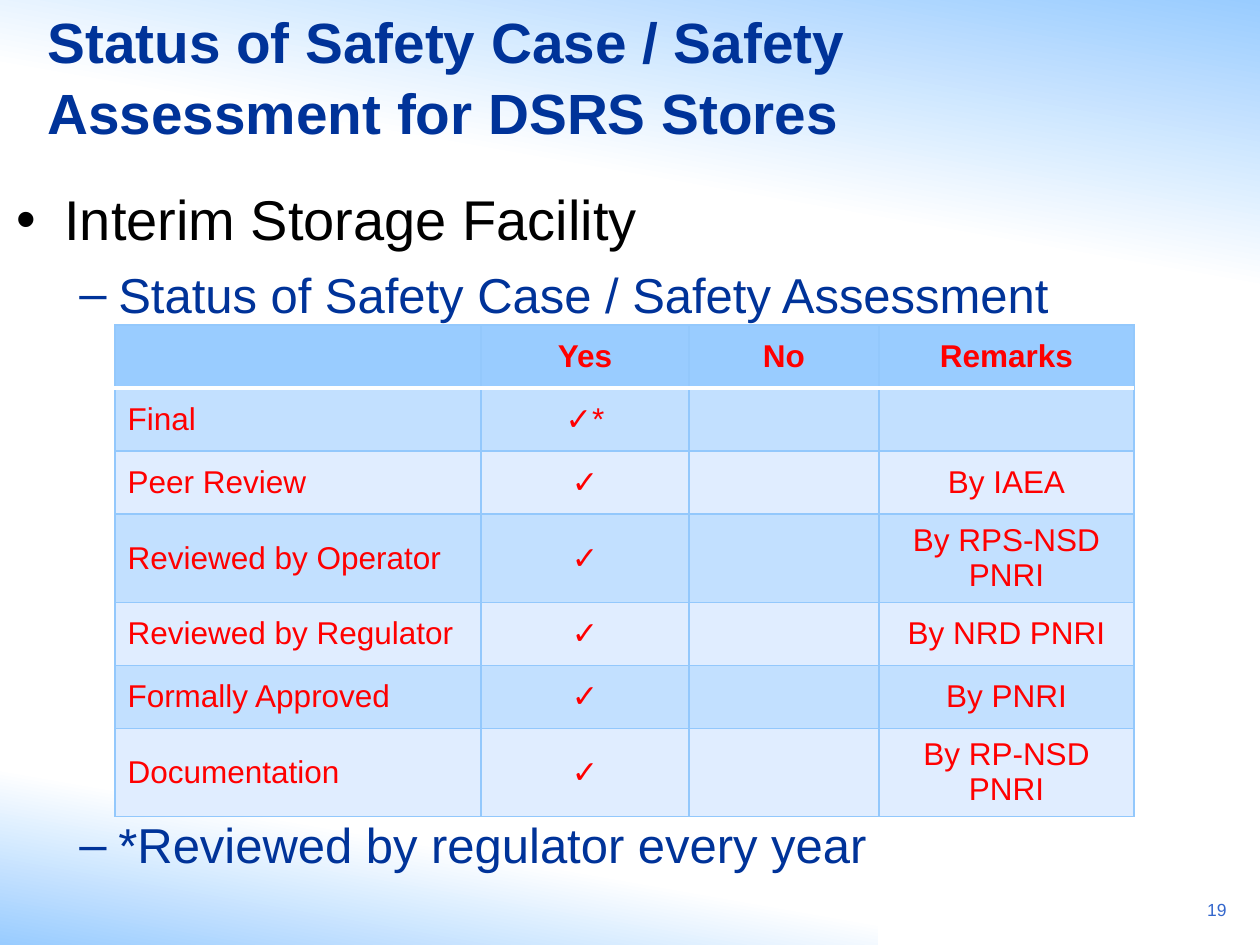
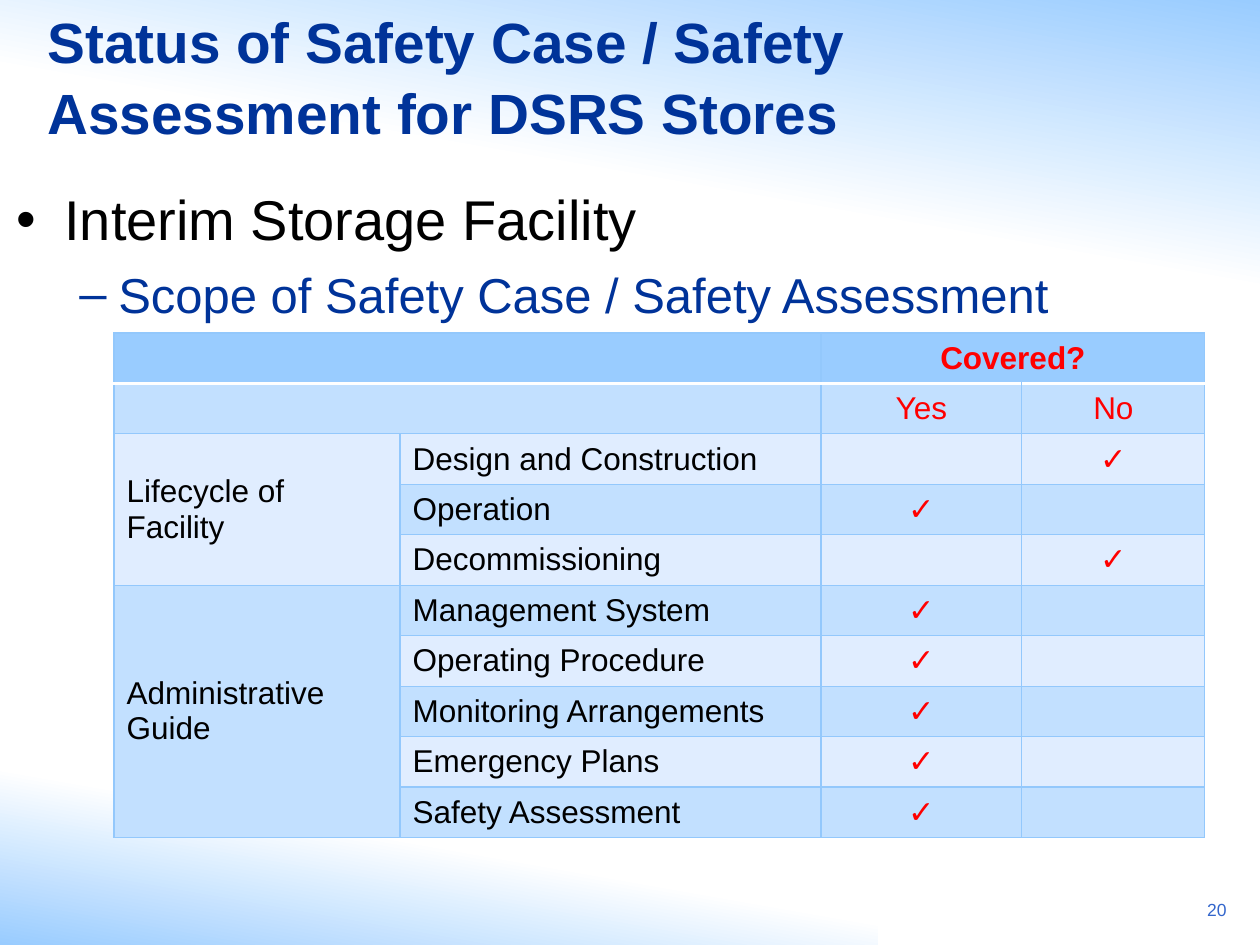
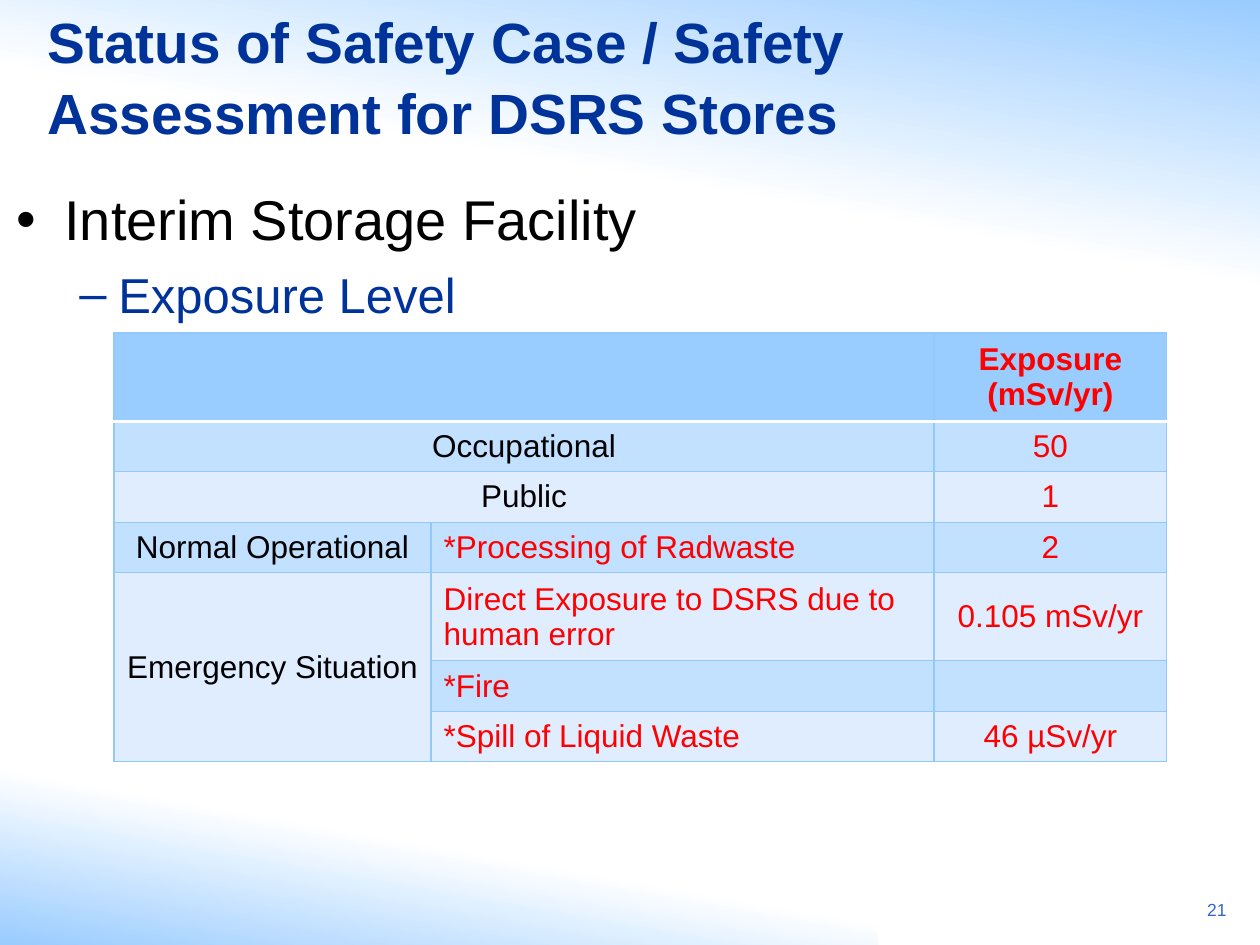
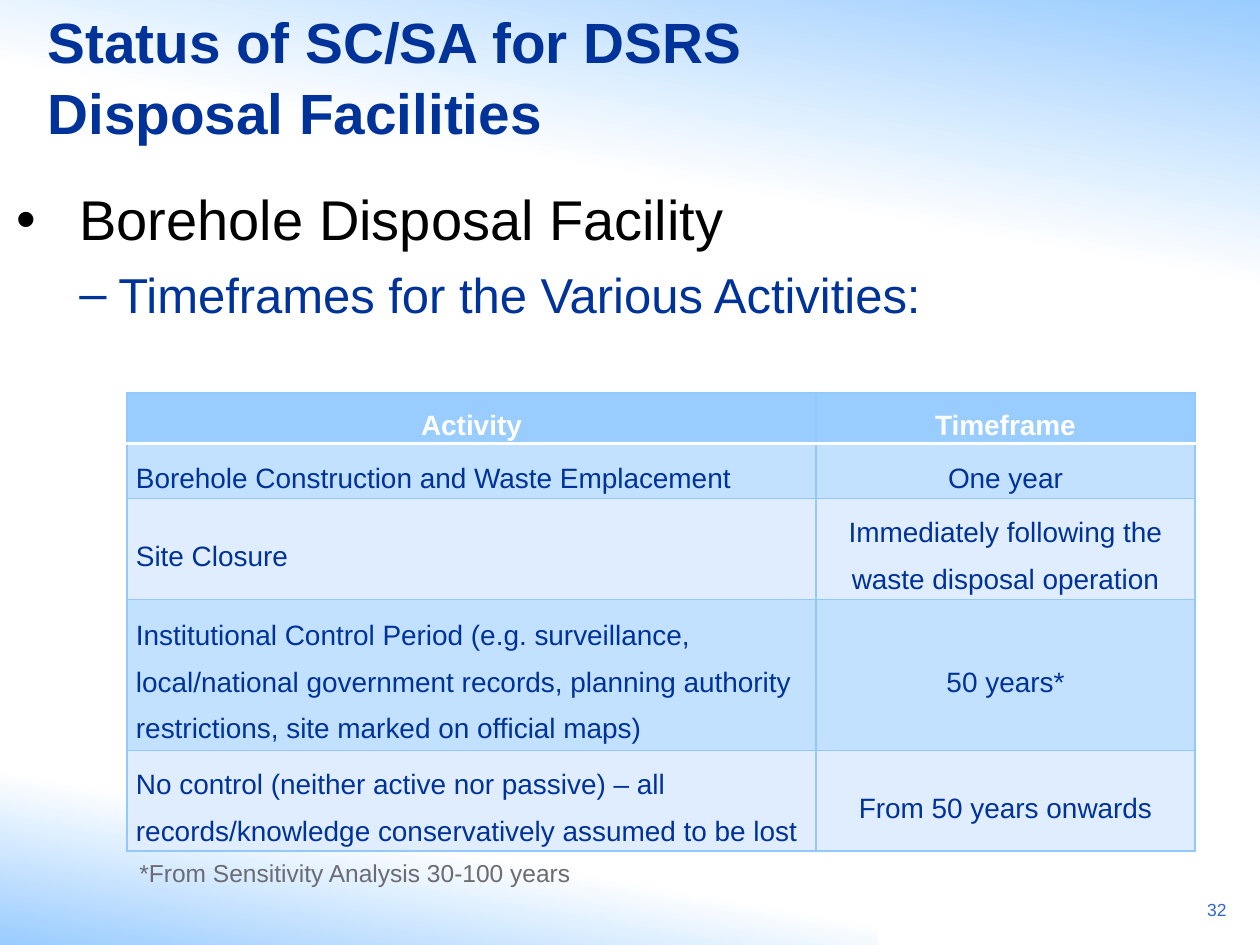
from dataclasses import dataclass, field
from typing import Any, NamedTuple

from lxml.etree import SubElement
from pptx import Presentation
from pptx.dml.color import RGBColor
from pptx.enum.shapes import MSO_SHAPE as Shape
from pptx.enum.text import MSO_ANCHOR as Anchor, PP_ALIGN as Align
from pptx.oxml.ns import qn
from pptx.util import Emu, Pt

COLORS = {
    "sky": "99CCFF", "white": "FFFFFF", "navy": "003399", "black": "000000",
    "red": "FF0000", "number": "3366CC", "gray": "6B6B71",
    "grid": "93C8FC", "dark_row": "C2E0FF", "light_row": "E0EDFF",
}
FONT = "Arial"
CHECK = "✓"
STORES_TITLE = "Status of Safety Case / Safety Assessment for DSRS Stores"


class Box(NamedTuple):
    left: int
    top: int
    width: int
    height: int


class Band(NamedTuple):
    box: Box
    angle: int
    white_from: float


class BulletLevel(NamedTuple):
    mark: str
    margin: int
    hanging: int
    size: int
    color: str


class Bullet(NamedTuple):
    text: str
    level: BulletLevel
    space_before: int = 0


class Column(NamedTuple):
    width: int
    align: Align
    color: str


class Span(NamedTuple):
    row: int
    column: int
    rows: int
    columns: int


@dataclass
class Grid:
    left: int
    top: int
    columns: list[Column]
    heights: list[int]
    rows: list[list[str]]
    spans: list[Span] = field(default_factory=list)
    size: int = 18
    header_color: str = "red"
    cell_format: dict[str, Any] = field(default_factory=dict)
    paragraph_format: dict[str, Any] = field(default_factory=dict)


@dataclass
class Page:
    number: int
    title: str
    bullets: list[Bullet]
    grid: Grid
    body: Box = Box(4, 173, 1131, 567)
    footnote: str = ""


BANDS = [
    Band(Box(0, 731, 878, 214), 80, 0.48),
    Band(Box(0, 0, 1260, 294), 260, 0.56),
]
TITLE_BOX = Box(35, 16, 953, 118)
NUMBER_BOX = Box(1168, 893, 71, 40)
FOOTNOTE_BOX = Box(127, 852, 694, 43)

TOPIC = BulletLevel("•", 48, 48, 32, "black")
WIDE_TOPIC = TOPIC._replace(margin=63, hanging=63)
DETAIL = BulletLevel("–", 102, 39, 28, "navy")


def px(length: int) -> Emu:
    return Emu(round(length * 914400 / 126))


def rgb(name: str) -> RGBColor:
    return RGBColor.from_string(COLORS[name])


def apply_format(target: Any, values: dict[str, Any]) -> None:
    for name, value in values.items():
        setattr(target, name, value)


def write(paragraph: Any, text: str, size: float, color: str, bold: bool = False) -> None:
    run = paragraph.add_run()
    run.text = text
    apply_format(run.font, {"name": FONT, "size": Pt(size), "bold": bold})
    run.font.color.rgb = rgb(color)


def add_frame(slide: Any, box: Box, **frame_format: Any) -> Any:
    frame = slide.shapes.add_textbox(*map(px, box)).text_frame
    apply_format(frame, {"word_wrap": True, **frame_format})
    return frame


def add_band(slide: Any, band: Band) -> None:
    shape = slide.shapes.add_shape(Shape.RECTANGLE, *map(px, band.box))
    shape.shadow.inherit = False
    shape.line.fill.background()
    shape.fill.gradient()
    shape.fill.gradient_angle = band.angle
    stops = zip(shape.fill.gradient_stops, ((0, "sky"), (band.white_from, "white")))
    for stop, (position, color) in stops:
        stop.position = position
        stop.color.rgb = rgb(color)


def add_bullets(slide: Any, box: Box, bullets: list[Bullet]) -> None:
    frame = add_frame(slide, box, margin_top=px(12))
    for index, (text, level, space_before) in enumerate(bullets):
        paragraph = frame.add_paragraph() if index else frame.paragraphs[0]
        properties = paragraph._p.get_or_add_pPr()
        properties.set("marL", str(px(level.margin)))
        properties.set("indent", str(-px(level.hanging)))
        SubElement(properties, qn("a:buFont"), typeface=FONT)
        SubElement(properties, qn("a:buChar"), char=level.mark)
        paragraph.space_before = Pt(space_before)
        write(paragraph, text, level.size, level.color)


def add_borders(cell: Any, row: int) -> None:
    """Rule the cell in the grid colour, with a white line under the header."""
    grid, rule = ("grid", 0.75), ("white", 2)
    sides = {
        "lnL": grid,
        "lnR": grid,
        "lnT": rule if row == 1 else grid,
        "lnB": rule if row == 0 else grid,
    }
    properties = cell._tc.get_or_add_tcPr()
    for side, (color, width) in sides.items():
        line = SubElement(properties, qn(f"a:{side}"), w=str(Pt(width)))
        fill = SubElement(line, qn("a:solidFill"))
        SubElement(fill, qn("a:srgbClr"), val=COLORS[color])


def add_grid(slide: Any, grid: Grid) -> None:
    box = Box(grid.left, grid.top, sum(c.width for c in grid.columns), sum(grid.heights))
    table = slide.shapes.add_table(
        len(grid.rows), len(grid.columns), *map(px, box)
    ).table
    for table_column, column in zip(table.columns, grid.columns):
        table_column.width = px(column.width)
    for table_row, height in zip(table.rows, grid.heights):
        table_row.height = px(height)

    for row, texts in enumerate(grid.rows):
        header = row == 0
        fill = "sky" if header else "dark_row" if row % 2 else "light_row"
        for index, (text, column) in enumerate(zip(texts, grid.columns)):
            cell = table.cell(row, index)
            add_borders(cell, row)
            cell.fill.solid()
            cell.fill.fore_color.rgb = rgb(fill)
            apply_format(cell, {"vertical_anchor": Anchor.MIDDLE, **grid.cell_format})
            if text:
                paragraph = cell.text_frame.paragraphs[0]
                align = Align.CENTER if header else column.align
                apply_format(paragraph, {"alignment": align, **grid.paragraph_format})
                color = grid.header_color if header else column.color
                write(paragraph, text, grid.size, color, header)

    for span in grid.spans:
        last = table.cell(span.row + span.rows - 1, span.column + span.columns - 1)
        table.cell(span.row, span.column).merge(last)


def add_page(deck: Any, page: Page) -> None:
    slide = deck.slides.add_slide(deck.slide_layouts[6])
    for band in BANDS:
        add_band(slide, band)

    title = add_frame(slide, TITLE_BOX, vertical_anchor=Anchor.MIDDLE).paragraphs[0]
    title.line_spacing = 1.04
    write(title, page.title, 32.4, "navy", True)

    number = add_frame(slide, NUMBER_BOX).paragraphs[0]
    number.alignment = Align.RIGHT
    write(number, str(page.number), 10, "number")

    add_bullets(slide, page.body, page.bullets)
    add_grid(slide, page.grid)
    if page.footnote:
        write(add_frame(slide, FOOTNOTE_BOX).paragraphs[0], page.footnote, 14, "gray")


STATUS = Grid(
    left=115, top=325,
    columns=[
        Column(366, Align.LEFT, "red"),
        Column(208, Align.CENTER, "red"),
        Column(190, Align.CENTER, "red"),
        Column(255, Align.CENTER, "red"),
    ],
    heights=[63, 63, 63, 85, 63, 63, 85],
    rows=[
        ["", "Yes", "No", "Remarks"],
        ["Final", CHECK + "*", "", ""],
        ["Peer Review", CHECK, "", "By IAEA"],
        ["Reviewed by Operator", CHECK, "", "By RPS-NSD PNRI"],
        ["Reviewed by Regulator", CHECK, "", "By NRD PNRI"],
        ["Formally Approved", CHECK, "", "By PNRI"],
        ["Documentation", CHECK, "", "By RP-NSD PNRI"],
    ],
)

SCOPE = Grid(
    left=114, top=333,
    columns=[
        Column(286, Align.LEFT, "black"),
        Column(421, Align.LEFT, "black"),
        Column(201, Align.CENTER, "red"),
        Column(183, Align.CENTER, "red"),
    ],
    heights=[48] * 9 + [50],
    rows=[
        ["", "", "Covered?", ""],
        ["", "", "Yes", "No"],
        ["Lifecycle of Facility", "Design and Construction", "", CHECK],
        ["", "Operation", CHECK, ""],
        ["", "Decommissioning", "", CHECK],
        ["Administrative Guide", "Management System", CHECK, ""],
        ["", "Operating Procedure", CHECK, ""],
        ["", "Monitoring Arrangements", CHECK, ""],
        ["", "Emergency Plans", CHECK, ""],
        ["", "Safety Assessment", CHECK, ""],
    ],
    spans=[
        Span(0, 0, 1, 2), Span(0, 2, 1, 2), Span(1, 0, 1, 2),
        Span(2, 0, 3, 1), Span(5, 0, 5, 1),
    ],
)

EXPOSURE = Grid(
    left=114, top=333,
    columns=[
        Column(317, Align.CENTER, "black"),
        Column(503, Align.LEFT, "red"),
        Column(233, Align.CENTER, "red"),
    ],
    heights=[83, 48, 48, 48, 83, 48, 48],
    rows=[
        ["", "", "Exposure (mSv/yr)"],
        ["Occupational", "", "50"],
        ["Public", "", "1"],
        ["Normal Operational", "*Processing of Radwaste", "2"],
        ["Emergency Situation", "Direct Exposure to DSRS due to human error", "0.105 mSv/yr"],
        ["", "*Fire", ""],
        ["", "*Spill of Liquid Waste", "46 µSv/yr"],
    ],
    spans=[Span(0, 0, 1, 2), Span(1, 0, 1, 2), Span(2, 0, 1, 2), Span(4, 0, 3, 1)],
)

TIMEFRAMES = Grid(
    left=127, top=393,
    columns=[Column(689, Align.LEFT, "navy"), Column(379, Align.CENTER, "navy")],
    heights=[46, 55, 94, 140, 93],
    rows=[
        ["Activity", "Timeframe"],
        ["Borehole Construction and Waste Emplacement", "One year"],
        ["Site Closure", "Immediately following the waste disposal operation"],
        ["Institutional Control Period (e.g. surveillance, local/national government "
         "records, planning authority restrictions, site marked on official maps)",
         "50 years*"],
        ["No control (neither active nor passive) – all records/knowledge "
         "conservatively assumed to be lost", "From 50 years onwards"],
    ],
    size=16,
    header_color="white",
    cell_format={
        "margin_left": px(9), "margin_right": px(9), "margin_top": 0, "margin_bottom": 0,
    },
    paragraph_format={"line_spacing": 1.5, "space_after": Pt(12)},
)

STORAGE = Bullet("Interim Storage Facility", TOPIC)
PAGES = [
    Page(
        19, STORES_TITLE,
        [
            STORAGE,
            Bullet("Status of Safety Case / Safety Assessment", DETAIL, 7),
            Bullet("*Reviewed by regulator every year", DETAIL, 281),
        ],
        STATUS, body=Box(4, 173, 1131, 730),
    ),
    Page(
        20, STORES_TITLE,
        [STORAGE, Bullet("Scope of Safety Case / Safety Assessment", DETAIL, 7)],
        SCOPE,
    ),
    Page(21, STORES_TITLE, [STORAGE, Bullet("Exposure Level", DETAIL, 7)], EXPOSURE),
    Page(
        32, "Status of SC/SA for DSRS Disposal Facilities",
        [
            Bullet("Borehole Disposal Facility", WIDE_TOPIC),
            Bullet("Timeframes for the Various Activities:", DETAIL, 7),
        ],
        TIMEFRAMES, body=Box(4, 173, 1256, 567),
        footnote="*From Sensitivity Analysis 30-100 years",
    ),
]


def main() -> None:
    deck = Presentation()
    deck.slide_width, deck.slide_height = px(1260), px(945)
    for page in PAGES:
        add_page(deck, page)
    deck.save("out.pptx")


if __name__ == "__main__":
    main()
